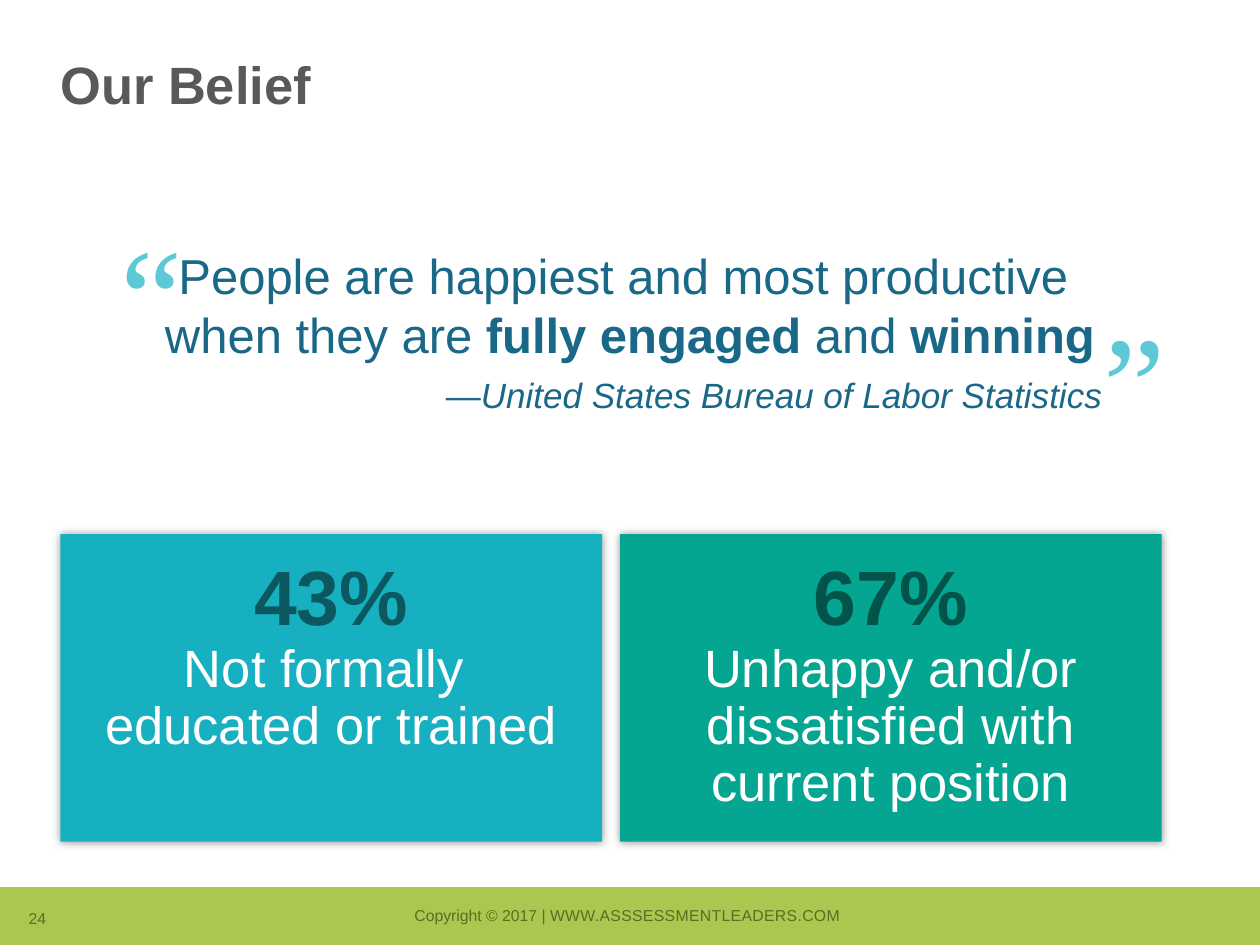
"""Build the "Our Belief" slide: a quotation above two statistic cards."""
from dataclasses import dataclass
from typing import Optional

from lxml import etree
from pptx import Presentation
from pptx.dml.color import RGBColor
from pptx.enum.shapes import MSO_SHAPE
from pptx.enum.text import MSO_ANCHOR, PP_ALIGN
from pptx.oxml.ns import qn
from pptx.util import Inches, Pt

RECT = MSO_SHAPE.RECTANGLE
TOP, BOTTOM = MSO_ANCHOR.TOP, MSO_ANCHOR.BOTTOM
LEFT, CENTER, RIGHT = PP_ALIGN.LEFT, PP_ALIGN.CENTER, PP_ALIGN.RIGHT
WIDTH, HEIGHT = Inches(10), Inches(7.5)
COLS, ROWS = 100, 75


@dataclass(frozen=True)
class Theme:
    sans: str = "Arial"
    serif: str = "Times New Roman"
    title: str = "595959"
    quote: str = "196888"
    mark: str = "5DC8D6"
    footer: str = "AAC750"
    footer_text: str = "5B6E21"
    white: str = "FFFFFF"
    shadow: str = "000000"
    small: int = 9
    source: int = 20
    body: int = 28
    heading: int = 30
    figure: int = 44
    mark_size: int = 80


@dataclass(frozen=True)
class Box:
    col: float
    row: float
    cols: float
    rows: float

    def emu(self) -> tuple:
        x, y = WIDTH / COLS, HEIGHT / ROWS
        return (round(self.col * x), round(self.row * y),
                round(self.cols * x), round(self.rows * y))


@dataclass(frozen=True)
class Run:
    text: str
    size: int
    color: str
    bold: bool = False
    italic: bool = False
    font: str = Theme.sans
    spacing: Optional[int] = None


@dataclass(frozen=True)
class Card:
    figure: str
    caption: str
    fill: str
    figure_color: str


THEME = Theme()
CARD_LEFT, CARD_TOP, CARD_COLS, CARD_ROWS, CARD_STEP = 4.8, 42.4, 43, 24.4, 44.4
CARDS = (
    Card("43%", "Not formally \neducated or trained", "17B0C1", "0C5860"),
    Card("67%", "Unhappy and/or dissatisfied with current position", "04A692", "025349"),
)
MARKS = (("“", Box(8.6, 15.9, 25.1, 14.5)), ("”", Box(86.6, 22.9, 25.1, 14.5)))


def write(p, runs: tuple, align=LEFT, line: float = 1.0, after: float = 0) -> None:
    """Fill a paragraph with runs, turning newlines into line breaks."""
    p.alignment, p.line_spacing, p.space_after = align, line, Pt(after)
    for run in runs:
        for i, text in enumerate(run.text.split("\n")):
            if i:
                p.add_line_break()
            if not text:
                continue
            r = p.add_run()
            r.text = text
            f = r.font
            f.name, f.size, f.bold, f.italic = run.font, Pt(run.size), run.bold, run.italic
            f.color.rgb = RGBColor.from_string(run.color)
            if run.spacing is not None:
                r._r.get_or_add_rPr().set("spc", str(run.spacing))


def add_text(s, box: Box, runs: tuple, align=LEFT, line: float = 1.0,
             after: float = 0, anchor=TOP, wrap: bool = True):
    """Add a text box with one paragraph and return its text frame."""
    tf = s.shapes.add_textbox(*box.emu()).text_frame
    tf.word_wrap, tf.vertical_anchor = wrap, anchor
    write(tf.paragraphs[0], runs, align, line, after)
    return tf


def add_rect(s, box: Box, fill: str):
    """Add a plain filled rectangle without outline."""
    sp = s.shapes.add_shape(RECT, *box.emu())
    sp.shadow.inherit = False
    sp.fill.solid()
    sp.fill.fore_color.rgb = RGBColor.from_string(fill)
    sp.line.fill.background()
    return sp


def add_glow_shadow(sp) -> None:
    """Give a shape a soft centred shadow."""
    effects = sp._element.spPr.find(qn("a:effectLst"))
    shadow = etree.SubElement(effects, qn("a:outerShdw"), blurRad=str(Pt(5)),
                              dist="0", dir="0", algn="ctr", rotWithShape="0")
    color = etree.SubElement(shadow, qn("a:srgbClr"), val=THEME.shadow)
    etree.SubElement(color, qn("a:alpha"), val="40000")


def add_card(s, index: int, card: Card) -> None:
    """Draw one statistic card in its column."""
    box = Box(CARD_LEFT + index * CARD_STEP, CARD_TOP, CARD_COLS, CARD_ROWS)
    sp = add_rect(s, box, card.fill)
    add_glow_shadow(sp)
    tf = sp.text_frame
    tf.word_wrap, tf.vertical_anchor, tf.margin_top = True, TOP, Inches(0.2)
    write(tf.paragraphs[0],
          (Run(card.figure + "\n", THEME.figure, card.figure_color, bold=True),
           Run(card.caption, THEME.heading, THEME.white)),
          CENTER, line=0.9, after=8)


def add_quote(s) -> None:
    """Draw the quotation, its source and its large quotation marks."""
    for mark, box in MARKS:
        add_text(s, box, (Run(mark, THEME.mark_size, THEME.mark, font=THEME.serif),))
    size, color = THEME.body, THEME.quote
    tf = add_text(s, Box(11.5, 19, 77, 14.6), (
        Run("People are happiest and most productive \nwhen they are ", size, color),
        Run("fully engaged ", size, color, bold=True),
        Run("and ", size, color),
        Run("winning", size, color, bold=True)), CENTER, after=6)
    write(tf.add_paragraph(), (
        Run("—", THEME.source, color),
        Run("United States Bureau of Labor Statistics", THEME.source, color, italic=True)),
        RIGHT, after=6)


def add_footer(s) -> None:
    """Draw the footer band with copyright line and slide number."""
    add_rect(s, Box(0, 70.4, COLS, 4.6), THEME.footer)
    size, color = THEME.small, THEME.footer_text
    add_text(s, Box(31.7, 71.4, 36.5, 2.5), (
        Run("Copyright © 2017 | ", size, color),
        Run("WWW.ASSSESSMENTLEADERS.COM ", size, color, spacing=20)),
        CENTER, anchor=BOTTOM, wrap=False)
    add_text(s, Box(1.3, 71.6, 3.6, 2.5), (Run("24", size, color),),
             anchor=BOTTOM, wrap=False)


def main() -> None:
    """Assemble and save the slide."""
    prs = Presentation()
    prs.slide_width, prs.slide_height = WIDTH, HEIGHT
    s = prs.slides.add_slide(prs.slide_layouts[6])
    add_footer(s)
    add_text(s, Box(3.8, 4.2, 92.5, 8.3),
             (Run("Our Belief", THEME.heading, THEME.title, bold=True),), line=0.9)
    add_quote(s)
    for index, card in enumerate(CARDS):
        add_card(s, index, card)
    prs.save("out.pptx")


if __name__ == "__main__":
    main()
